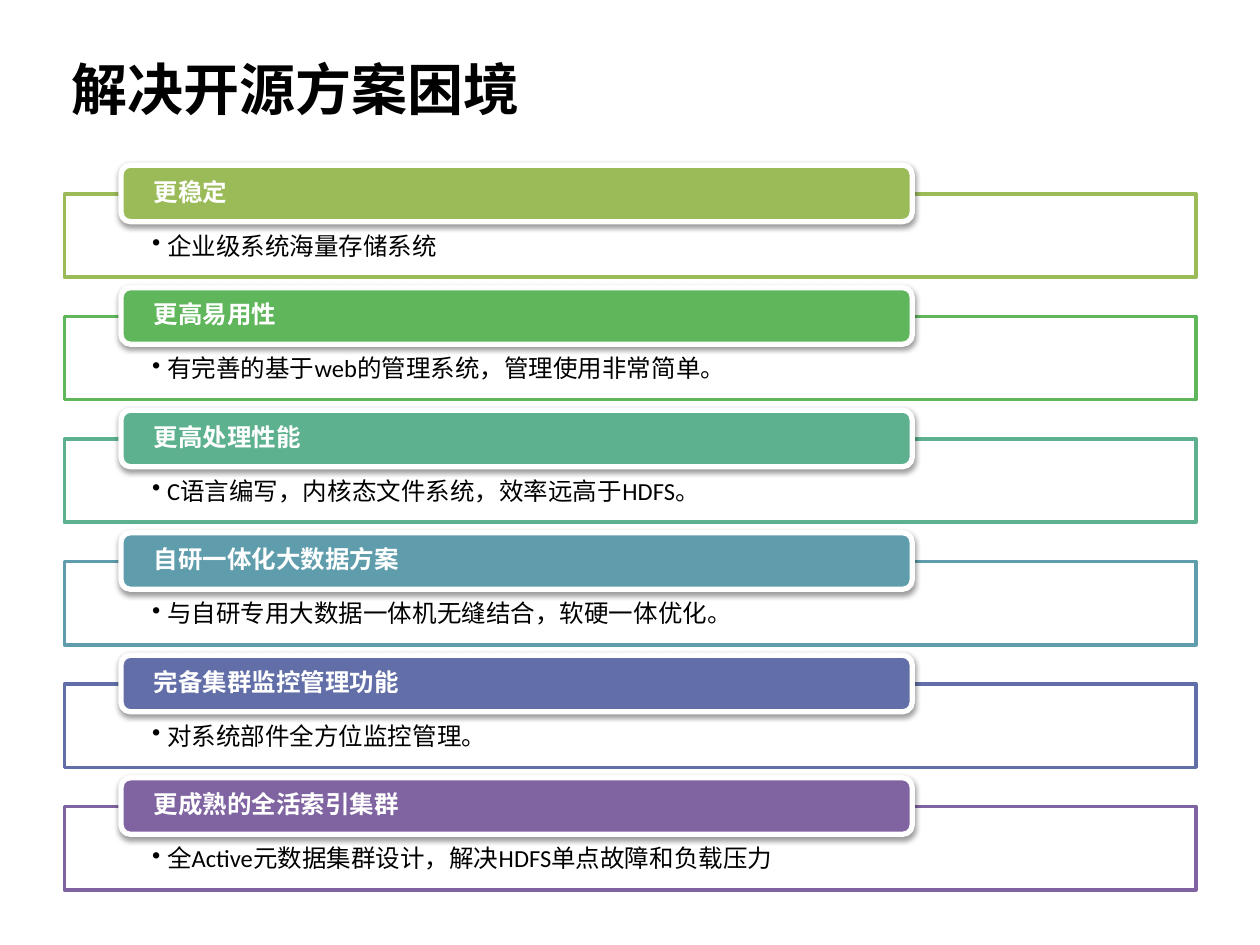
from dataclasses import dataclass

from lxml.etree import SubElement
from pptx import Presentation
from pptx.dml.color import RGBColor
from pptx.enum.shapes import MSO_SHAPE as Shape
from pptx.enum.text import MSO_ANCHOR as Anchor, PP_ALIGN as Align
from pptx.oxml.ns import qn
from pptx.util import Cm, Pt


@dataclass(frozen=True)
class Theme:
    latin: str = "Calibri"
    chinese: str = "Noto Sans CJK SC"
    black: str = "000000"
    white: str = "FFFFFF"
    title_size: int = 32
    text_size: int = 14
    frame_line: int = 2
    header_line: int = 3


THEME = Theme()
TITLE = "解决开源方案困境"
BENEFITS = [
    ("更稳定", "企业级系统海量存储系统", "9BBB59"),
    ("更高易用性", "有完善的基于web的管理系统，管理使用非常简单。", "5FB65B"),
    ("更高处理性能", "C语言编写，内核态文件系统，效率远高于HDFS。", "5DB18E"),
    ("自研一体化大数据方案", "与自研专用大数据一体机无缝结合，软硬一体优化。", "5F9DAC"),
    ("完备集群监控管理功能", "对系统部件全方位监控管理。", "626EA7"),
    ("更成熟的全活索引集群", "全Active元数据集群设计，解决HDFS单点故障和负载压力", "8064A2"),
]
FIRST_TOP = 3.33
ROW_PITCH = 2.47
FRAME_OFFSET = 0.58


def write_text(box, text, size, color, latin, bold=False):
    paragraph = box.text_frame.paragraphs[0]
    paragraph.text = text
    paragraph.alignment = Align.LEFT
    for span in paragraph.runs:
        span.font.size = Pt(size)
        span.font.bold = bold
        span.font.name = latin
        span.font.color.rgb = RGBColor.from_string(color)
        SubElement(span.font._element, qn("a:ea"), typeface=THEME.chinese)
    return paragraph


def set_frame(box, anchor, left, top, right, bottom):
    frame = box.text_frame
    frame.word_wrap = True
    frame.vertical_anchor = anchor
    frame.margin_left, frame.margin_top = Cm(left), Cm(top)
    frame.margin_right, frame.margin_bottom = Cm(right), Cm(bottom)


def add_box(page, kind, left, top, width, height, fill, line, line_width):
    box = page.shapes.add_shape(kind, Cm(left), Cm(top), Cm(width), Cm(height))
    box.shadow.inherit = False
    box.fill.solid()
    box.fill.fore_color.rgb = RGBColor.from_string(fill)
    box.line.color.rgb = RGBColor.from_string(line)
    box.line.width = Pt(line_width)
    return box


def add_bullet(paragraph):
    paragraph.level = 1
    properties = paragraph._p.get_or_add_pPr()
    indent = Cm(0.3)
    properties.set("marL", str(indent))
    properties.set("indent", str(-indent))
    SubElement(properties, qn("a:buChar"), char="•")


def add_shadow(box):
    effects = box._element.spPr.find(qn("a:effectLst"))
    shadow = SubElement(effects, qn("a:outerShdw"), blurRad=str(Pt(3.1)),
                        dist=str(Pt(1.6)), dir="5400000", rotWithShape="0")
    color = SubElement(shadow, qn("a:srgbClr"), val=THEME.black)
    SubElement(color, qn("a:alpha"), val="38000")


def add_title(page, text):
    title = page.shapes.title
    title.left, title.top, title.width, title.height = Cm(1.19), Cm(0.99), Cm(20.32), Cm(1.57)
    set_frame(title, Anchor.MIDDLE, 0.25, 0.13, 0.25, 0.13)
    write_text(title, text, THEME.title_size, THEME.black, THEME.chinese, bold=True)


def add_detail(page, top, text, color):
    box = add_box(page, Shape.RECTANGLE, 1.3, top, 22.81, 1.68,
                  THEME.white, color, THEME.frame_line)
    fill_color = box._element.spPr.find(qn("a:solidFill")).find(qn("a:srgbClr"))
    SubElement(fill_color, qn("a:alpha"), val="90000")
    set_frame(box, Anchor.TOP, 1.77, 0.81, 1.77, 0.28)
    paragraph = write_text(box, text, THEME.text_size, THEME.black, THEME.latin)
    add_bullet(paragraph)
    paragraph.line_spacing = 0.9


def add_header(page, top, text, color):
    box = add_box(page, Shape.ROUNDED_RECTANGLE, 2.44, top, 15.95, 1.14,
                  color, THEME.white, THEME.header_line)
    add_shadow(box)
    set_frame(box, Anchor.MIDDLE, 0.6, 0, 0.6, 0)
    paragraph = write_text(box, text, THEME.text_size, THEME.white, THEME.latin, bold=True)
    paragraph.line_spacing = 0.9


def main():
    deck = Presentation()
    deck.slide_width, deck.slide_height = Cm(25.4), Cm(19.05)
    page = deck.slides.add_slide(deck.slide_layouts[5])
    add_title(page, TITLE)
    for row, (heading, detail, color) in enumerate(BENEFITS):
        top = FIRST_TOP + row * ROW_PITCH
        add_detail(page, top + FRAME_OFFSET, detail, color)
        add_header(page, top, heading, color)
    deck.save("out.pptx")


if __name__ == "__main__":
    main()
